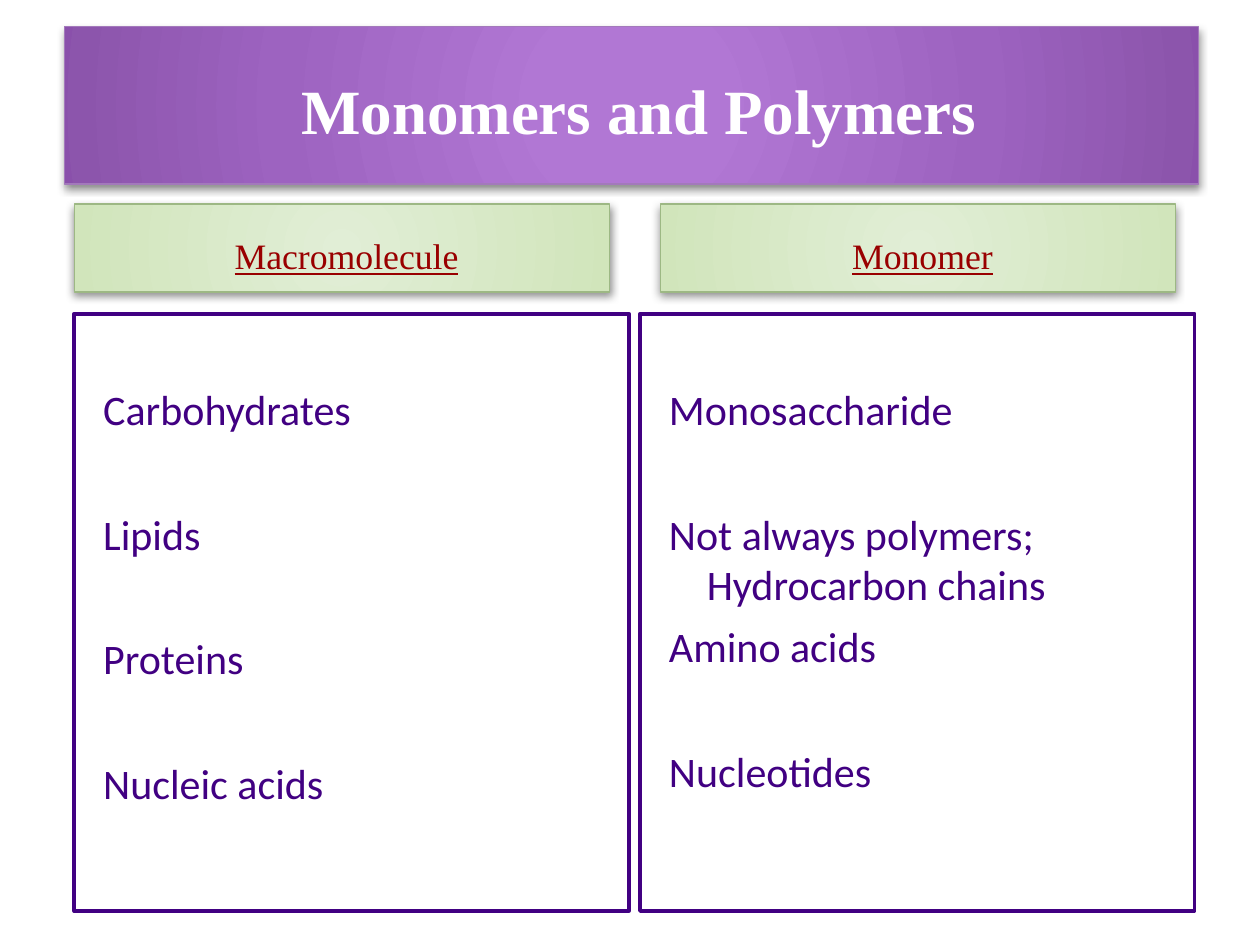
from dataclasses import dataclass

from lxml import etree
from pptx import Presentation
from pptx.dml.color import RGBColor
from pptx.enum.shapes import MSO_SHAPE
from pptx.enum.text import MSO_ANCHOR, PP_ALIGN
from pptx.oxml.ns import qn
from pptx.util import Pt

RECTANGLE = MSO_SHAPE.RECTANGLE
TOP, MIDDLE = MSO_ANCHOR.TOP, MSO_ANCHOR.MIDDLE
LEFT, CENTER = PP_ALIGN.LEFT, PP_ALIGN.CENTER

WHITE = RGBColor(0xFF, 0xFF, 0xFF)
BLACK = RGBColor(0x00, 0x00, 0x00)
INDIGO = RGBColor(0x41, 0x00, 0x82)
DARK_RED = RGBColor(0x99, 0x00, 0x00)
PURPLE_EDGE = RGBColor(0xA3, 0x79, 0xBB)
GREEN_EDGE = RGBColor(0x9D, 0xB8, 0x84)
PURPLE_STOPS = (
    (0, RGBColor(0xB2, 0x77, 0xD5)),
    (15, RGBColor(0xB1, 0x77, 0xD4)),
    (62, RGBColor(0x9D, 0x63, 0xC0)),
    (97, RGBColor(0x8C, 0x55, 0xAC)),
    (100, RGBColor(0x8A, 0x50, 0xAB)),
)
GREEN_STOPS = (
    (0, RGBColor(0xE1, 0xEE, 0xD6)),
    (100, RGBColor(0xD1, 0xE5, 0xBB)),
)

TITLE_FONT = {"name": "Times New Roman", "size": Pt(36), "bold": True}
HEADING_FONT = {"name": "Times New Roman", "size": Pt(20.4), "underline": True}
ITEM_FONT = {"name": "Calibri", "size": Pt(24)}

HEADING_TOP, HEADING_HEIGHT = 116.6, 50.4
LIST_TOP, LIST_WIDTH, LIST_HEIGHT = 179.3, 316.8, 341.3
WIDE_GAP, NARROW_GAP = 42.4, 6.5


@dataclass
class Item:
    text: str
    space_before: float = WIDE_GAP


@dataclass
class Column:
    left: float
    heading: str
    heading_left: float
    heading_width: float
    items: list[Item]


COLUMNS = [
    Column(42.5, "Macromolecule", 42.5, 306,
           [Item("Carbohydrates", 0), Item("Lipids"), Item("Proteins"),
            Item("Nucleic acids")]),
    Column(365.8, "Monomer", 377.3, 294.5,
           [Item("Monosaccharide", 0),
            Item("Not always polymers; Hydrocarbon chains"),
            Item("Amino acids", NARROW_GAP), Item("Nucleotides")]),
]


def add_color(parent, color: RGBColor):
    return etree.SubElement(parent, qn("a:srgbClr"), val=str(color))


def fill_radial(shape, stops) -> None:
    shape.fill.gradient()
    gradient = shape._element.spPr.find(qn("a:gradFill"))
    for child in list(gradient):
        gradient.remove(child)
    stop_list = etree.SubElement(gradient, qn("a:gsLst"))
    for percent, color in stops:
        stop = etree.SubElement(stop_list, qn("a:gs"), pos=str(percent * 1000))
        add_color(stop, color)
    radial = etree.SubElement(gradient, qn("a:path"), path="circle")
    etree.SubElement(radial, qn("a:fillToRect"),
                     l="50000", t="50000", r="50000", b="50000")


def add_shadow(shape) -> None:
    effects = shape._element.spPr.find(qn("a:effectLst"))
    shadow = etree.SubElement(
        effects, qn("a:outerShdw"), blurRad=str(Pt(5)), dist=str(Pt(2)),
        dir="5400000", algn="ctr", rotWithShape="0")
    etree.SubElement(add_color(shadow, BLACK), qn("a:alpha"), val="43000")


def style_box(shape, edge: RGBColor, edge_width: float, stops=None) -> None:
    """Give a box its outline, and a shadowed gradient when stops are given."""
    shape.shadow.inherit = False
    shape.line.color.rgb = edge
    shape.line.width = Pt(edge_width)
    if stops:
        fill_radial(shape, stops)
        add_shadow(shape)
    else:
        shape.fill.solid()
        shape.fill.fore_color.rgb = WHITE


def set_frame(shape, anchor, left: float, top: float) -> None:
    frame_format = {"word_wrap": True, "vertical_anchor": anchor,
                    "margin_left": Pt(left), "margin_right": Pt(7.2),
                    "margin_top": Pt(top), "margin_bottom": Pt(3.6)}
    for name, value in frame_format.items():
        setattr(shape.text_frame, name, value)


def write(para, text: str, font: dict, color: RGBColor, alignment) -> None:
    para.alignment = alignment
    span = para.add_run()
    span.text = text
    for name, value in font.items():
        setattr(span.font, name, value)
    span.font.color.rgb = color


def draw_title(page) -> None:
    title = page.shapes.title
    place = {"left": 36.7, "top": 15.1, "width": 648, "height": 90}
    for name, value in place.items():
        setattr(title, name, Pt(value))
    style_box(title, PURPLE_EDGE, 0.75, PURPLE_STOPS)
    set_frame(title, MIDDLE, 16, 8)
    write(title.text_frame.paragraphs[0], "Monomers and Polymers",
          TITLE_FONT, WHITE, CENTER)


def draw_heading(page, column: Column) -> None:
    box = page.shapes.add_shape(
        RECTANGLE, Pt(column.heading_left), Pt(HEADING_TOP),
        Pt(column.heading_width), Pt(HEADING_HEIGHT))
    style_box(box, GREEN_EDGE, 0.75, GREEN_STOPS)
    set_frame(box, MIDDLE, 12.2, 12)
    write(box.text_frame.paragraphs[0], column.heading,
          HEADING_FONT, DARK_RED, CENTER)


def draw_list(page, column: Column) -> None:
    box = page.shapes.add_shape(RECTANGLE, Pt(column.left), Pt(LIST_TOP),
                                Pt(LIST_WIDTH), Pt(LIST_HEIGHT))
    style_box(box, INDIGO, 2.25)
    set_frame(box, TOP, 7.2, 40)
    frame = box.text_frame
    for index, item in enumerate(column.items):
        para = frame.add_paragraph() if index else frame.paragraphs[0]
        write(para, item.text, ITEM_FONT, INDIGO, LEFT)
        para.space_before = Pt(item.space_before)
        properties = para._p.get_or_add_pPr()
        properties.set("marL", str(Pt(31)))
        properties.set("indent", str(Pt(-21.6)))


def main() -> None:
    deck = Presentation()
    deck.slide_width, deck.slide_height = Pt(720), Pt(540)
    page = deck.slides.add_slide(deck.slide_layouts[5])
    draw_title(page)
    for column in COLUMNS:
        draw_heading(page, column)
        draw_list(page, column)
    deck.save("out.pptx")


if __name__ == "__main__":
    main()
